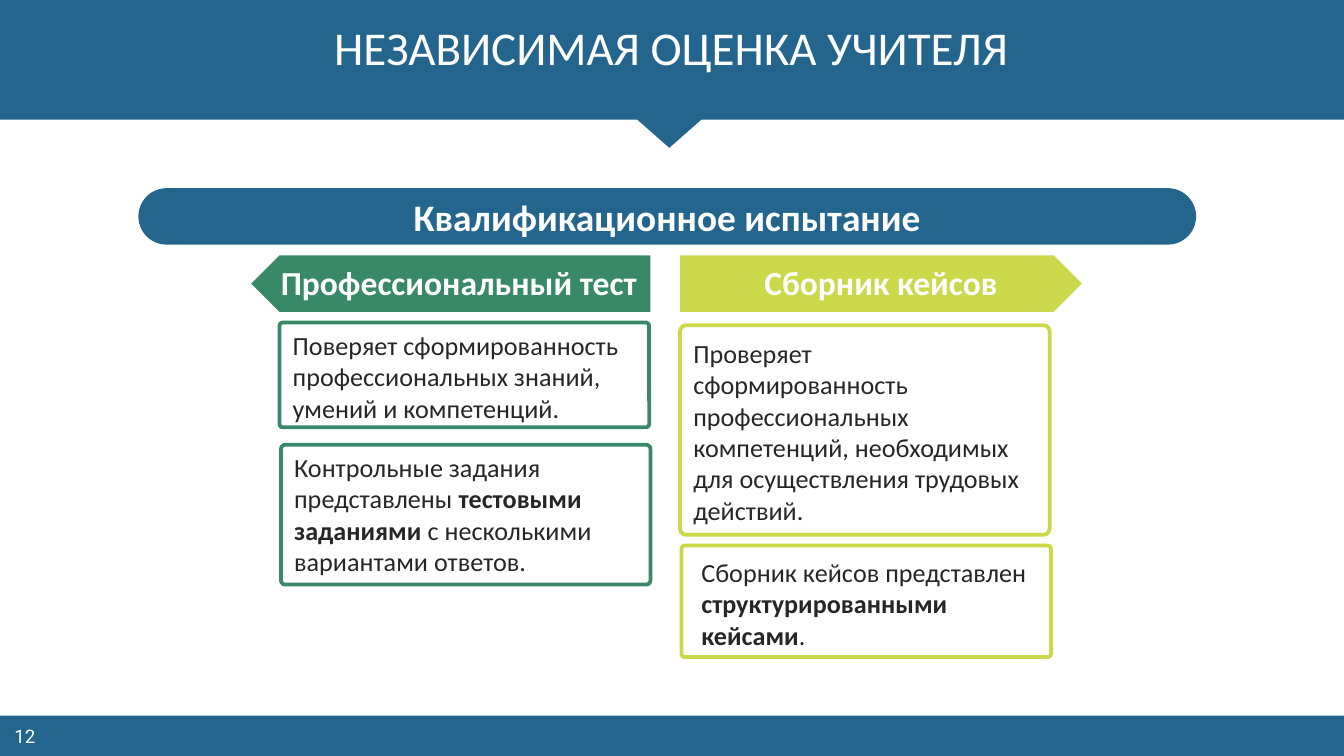
from pptx import Presentation
from pptx.dml.color import RGBColor
from pptx.enum.shapes import MSO_SHAPE
from pptx.enum.text import MSO_ANCHOR, MSO_AUTO_SIZE, PP_ALIGN
from pptx.util import Inches, Pt

BLUE = RGBColor(0x24, 0x65, 0x8D)
GREEN = RGBColor(0x38, 0x89, 0x68)
LIME = RGBColor(0xCA, 0xD8, 0x49)
WHITE = RGBColor(0xFF, 0xFF, 0xFF)
INK = RGBColor(0x26, 0x26, 0x26)

RECT, TRIANGLE = MSO_SHAPE.RECTANGLE, MSO_SHAPE.ISOSCELES_TRIANGLE
ROUNDED, PENTAGON = MSO_SHAPE.ROUNDED_RECTANGLE, MSO_SHAPE.PENTAGON
TOP, MIDDLE = MSO_ANCHOR.TOP, MSO_ANCHOR.MIDDLE
LEFT, CENTER = PP_ALIGN.LEFT, PP_ALIGN.CENTER
FIXED = MSO_AUTO_SIZE.NONE

WIDTH = 10
HEIGHT = WIDTH * 9 / 16
FOOTER_HEIGHT = 0.3
TEST_LEFT, CASES_LEFT = 2.08, 5.06
CARD_WIDTH = 2.75
ARROW_TOP, ARROW_HEIGHT = 1.9, 0.42

TEST_CARDS = [
    ((TEST_LEFT, 2.4, 0.78), (TEST_LEFT, 2.4, 2.7, 0.81),
     [["Поверяет сформированность профессиональных знаний,"],
      ["умений и компетенций."]]),
    ((TEST_LEFT + 0.01, 3.31, 1.04), (TEST_LEFT + 0.01, 3.31, 2.69, 1.04),
     [["Контрольные задания представлены ", "тестовыми заданиями ",
       "с несколькими вариантами ответов."]]),
]
CASE_CARDS = [
    ((CASES_LEFT, 2.42, 1.56), (CASES_LEFT, 2.46, 2.69, 1.51),
     [["Проверяет сформированность профессиональных компетенций, "
       "необходимых для осуществления трудовых действий."]]),
    ((CASES_LEFT + 0.01, 4.06, 0.83), (CASES_LEFT + 0.06, 4.09, 2.71, 0.81),
     [["Сборник кейсов представлен ", "структурированными кейсами", "."]]),
]


def inches(box):
    return [Inches(length) for length in box]


def add_solid(slide, kind, box, color):
    solid = slide.shapes.add_shape(kind, *inches(box))
    solid.shadow.inherit = False
    solid.fill.solid()
    solid.fill.fore_color.rgb = color
    solid.line.fill.background()
    return solid


def add_frame(slide, box, color):
    frame = slide.shapes.add_shape(ROUNDED, *inches(box))
    frame.shadow.inherit = False
    frame.adjustments[0] = 0.03
    frame.fill.background()
    frame.line.color.rgb = color
    frame.line.width = Pt(2)


def remove_margins(text_frame):
    text_frame.margin_left = text_frame.margin_right = 0
    text_frame.margin_top = text_frame.margin_bottom = 0


def style(paragraph, size, color, align=CENTER, bold=None, font="Calibri"):
    paragraph.alignment = align
    paragraph.font.name = font
    paragraph.font.size = Pt(size)
    paragraph.font.color.rgb = color
    paragraph.font.bold = bold


def add_label(slide, box, wording, size, wrap=False, **looks):
    label = slide.shapes.add_textbox(*inches(box)).text_frame
    remove_margins(label)
    label.word_wrap = wrap
    label.vertical_anchor = MIDDLE
    label.text = wording
    style(label.paragraphs[0], size, WHITE, **looks)


def add_body(slide, box, paragraphs):
    body = slide.shapes.add_textbox(*inches(box)).text_frame
    body.word_wrap = True
    for index, pieces in enumerate(paragraphs):
        paragraph = body.add_paragraph() if index else body.paragraphs[0]
        for order, piece in enumerate(pieces):
            run = paragraph.add_run()
            run.text = piece
            if order % 2:
                run.font.bold = True
        style(paragraph, 14, INK, LEFT)


def add_cards(slide, cards, color):
    for (left, top, height), text_box, paragraphs in cards:
        add_body(slide, text_box, paragraphs)
        add_frame(slide, (left, top, CARD_WIDTH, height), color)


def add_header(slide, wording):
    add_solid(slide, RECT, (0, 0, WIDTH, 0.89), BLUE)
    add_solid(slide, TRIANGLE, (4.73, 0.88, 0.5, 0.22), BLUE).rotation = 180
    title = slide.shapes.title
    title.left, title.top, title.width, title.height = inches((0.43, 0.14, 9.13, 0.37))
    slide.shapes._spTree.append(title._element)
    title.text = wording
    remove_margins(title.text_frame)
    title.text_frame.auto_size = FIXED
    title.text_frame.vertical_anchor = TOP
    style(title.text_frame.paragraphs[0], 25.2, WHITE)


def add_banner(slide, wording):
    banner = add_solid(slide, ROUNDED, (1.03, 1.4, 7.87, 0.42), BLUE)
    banner.adjustments[0] = 0.5
    banner.text_frame.text = wording
    banner.text_frame.vertical_anchor = MIDDLE
    style(banner.text_frame.paragraphs[0], 20, WHITE, bold=True)


def add_arrow(slide, left, width, color, label_left, label_width, wording):
    arrow = add_solid(slide, PENTAGON, (left, ARROW_TOP, width, ARROW_HEIGHT), color)
    label_box = (label_left, ARROW_TOP + 0.05, label_width, 0.3)
    add_label(slide, label_box, wording, 18, bold=True)
    return arrow


def main():
    deck = Presentation()
    deck.slide_width, deck.slide_height = Inches(WIDTH), Inches(HEIGHT)
    slide = deck.slides.add_slide(deck.slide_layouts[5])

    add_solid(slide, RECT, (0, HEIGHT - FOOTER_HEIGHT, WIDTH, FOOTER_HEIGHT), BLUE)
    add_label(slide, (0.02, 5.39, 0.33, 0.17), "12", 10, wrap=True, font="Roboto")
    add_header(slide, "НЕЗАВИСИМАЯ ОЦЕНКА УЧИТЕЛЯ")
    add_banner(slide, "Квалификационное испытание")

    test_arrow = add_arrow(slide, 1.87, 2.97, GREEN, TEST_LEFT, 2.67,
                           "Профессиональный тест")
    test_arrow._element.spPr.get_or_add_xfrm().set("flipH", "1")
    add_arrow(slide, CASES_LEFT, 2.99, LIME, 5.68, 1.75, "Сборник кейсов")

    add_cards(slide, TEST_CARDS, GREEN)
    add_cards(slide, CASE_CARDS, LIME)
    deck.save("out.pptx")


if __name__ == "__main__":
    main()
